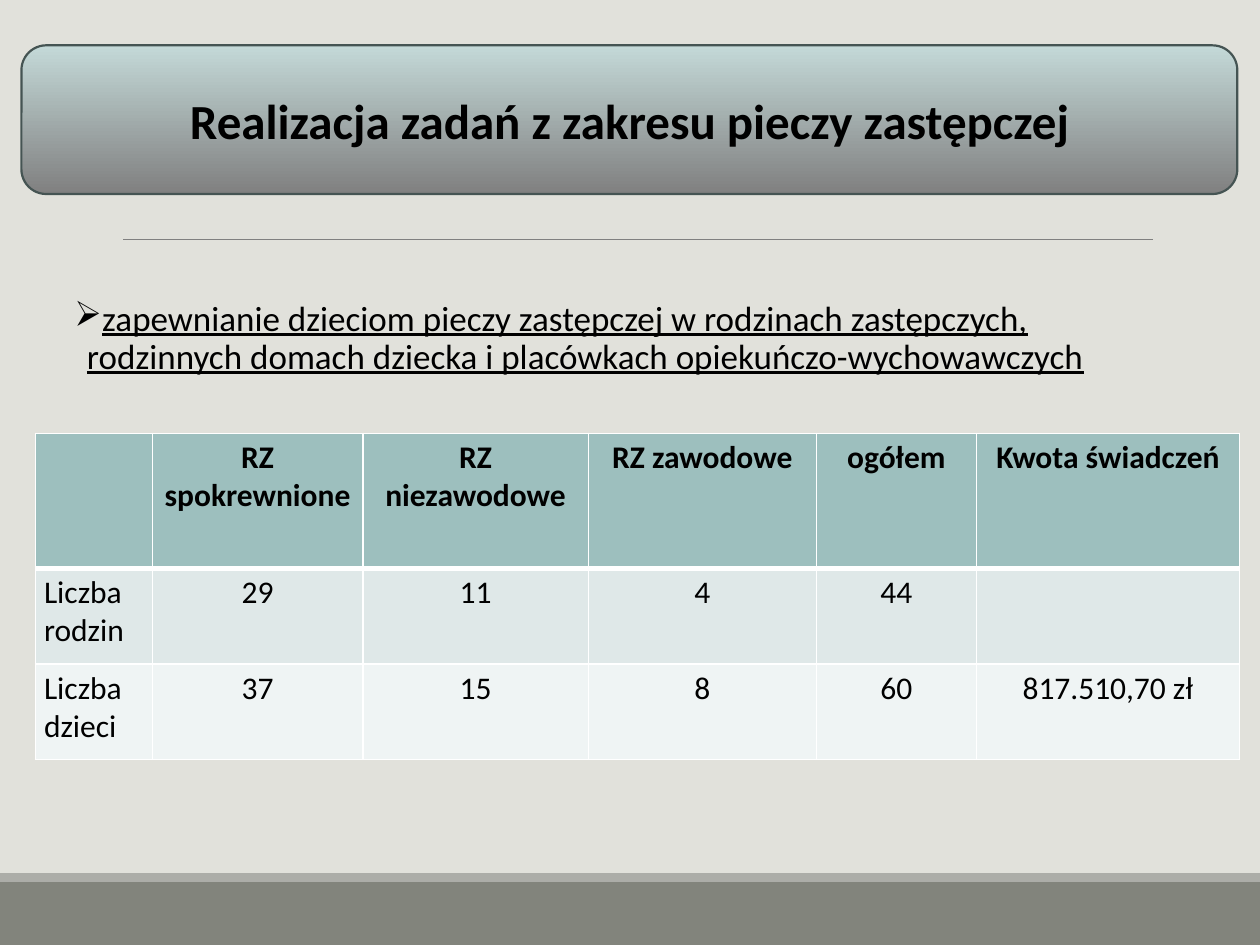
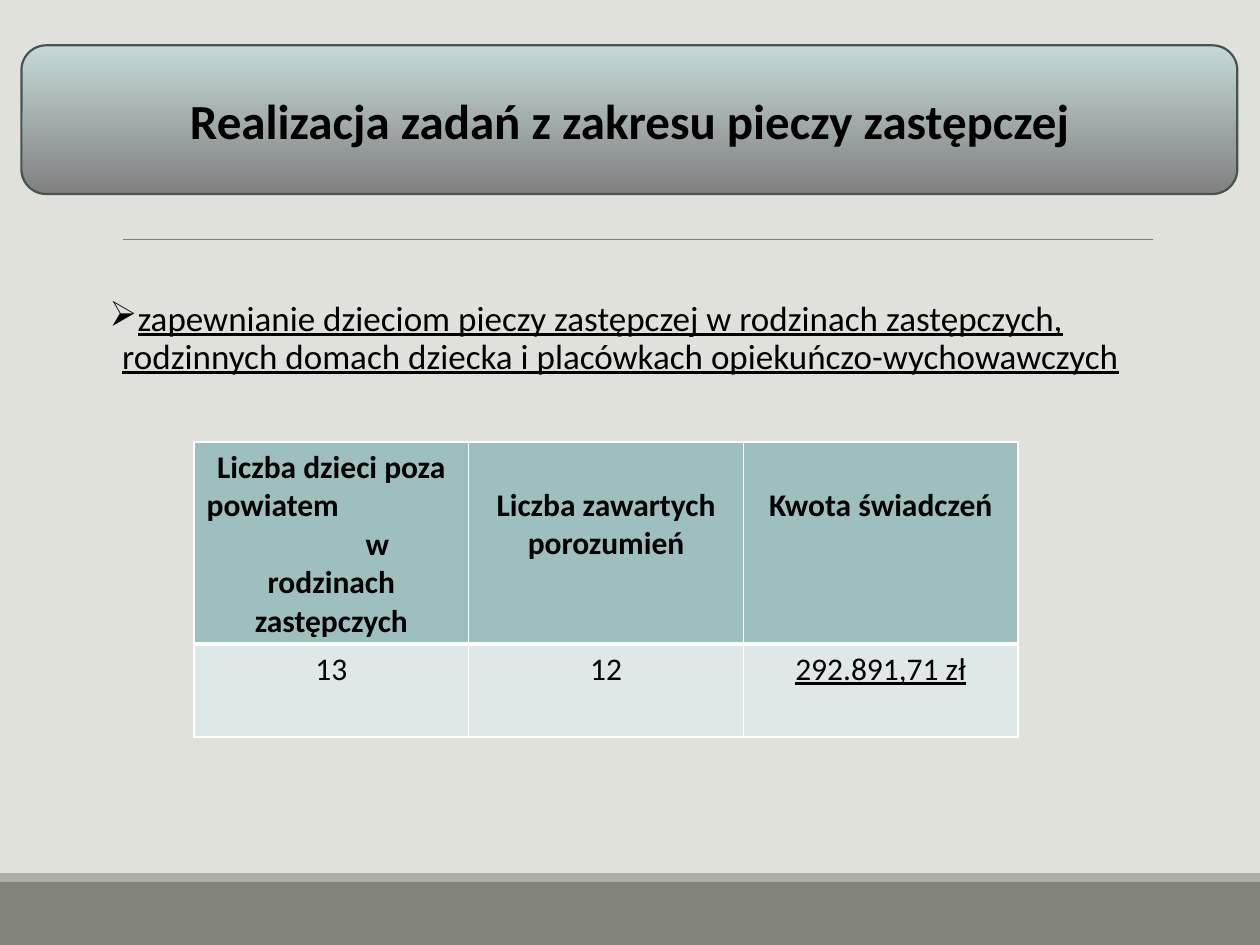
from pptx import Presentation
from pptx.dml.color import RGBColor
from pptx.enum.shapes import MSO_CONNECTOR as Connector, MSO_SHAPE as Shape
from pptx.enum.text import MSO_ANCHOR as Anchor, PP_ALIGN as Align
from pptx.oxml.ns import qn
from pptx.util import Inches, Pt
from lxml import etree

FONT = "Calibri"
BLACK, WHITE, BACKGROUND = "000000", "FFFFFF", "E1E1DB"
FOOTER, FOOTER_EDGE, RULE = "82847C", "ACADA8", "808080"
TITLE_LIGHT, TITLE_DARK, TITLE_LINE = "C4D9D8", "808080", "455453"
HEADER_FILL, BODY_FILLS = "9DBFBE", ["DFE8E8", "EFF4F4"]

TITLE = "Realizacja zadań z zakresu pieczy zastępczej"
TASK = ("zapewnianie dzieciom pieczy zastępczej w rodzinach zastępczych, "
        "rodzinnych domach dziecka i placówkach opiekuńczo-wychowawczych")
FAMILY_ROWS = [
    ["", "RZ spokrewnione", "RZ niezawodowe", "RZ zawodowe", "ogółem", "Kwota świadczeń"],
    ["Liczba rodzin", "29", "11", "4", "44", ""],
    ["Liczba dzieci", "37", "15", "8", "60", "817.510,70 zł"],
]
AGREEMENT_ROWS = [
    ["Liczba dzieci poza\npowiatem\nw\nrodzinach zastępczych",
     "Liczba zawartych porozumień", "Kwota świadczeń"],
    ["13", "12", "292.891,71 zł"],
]


def color(value):
    return RGBColor.from_string(value)


def inches(box):
    return [Inches(value) for value in box]


def style_font(paragraph, **formats):
    font = paragraph.font
    for name, value in {"name": FONT, **formats}.items():
        setattr(font, name, value)
    font.color.rgb = color(BLACK)


def add_band(slide, box, fill):
    band = slide.shapes.add_shape(Shape.RECTANGLE, *inches(box))
    band.shadow.inherit = False
    band.fill.solid()
    band.fill.fore_color.rgb = color(fill)
    band.line.fill.background()


def add_frame(slide):
    """Draw the footer bands and the rule under the title."""
    add_band(slide, (0, 7, 10, 0.5), FOOTER)
    add_band(slide, (0, 6.93, 10, 0.07), FOOTER_EDGE)
    rule = slide.shapes.add_connector(Connector.STRAIGHT, *inches((0.98, 1.9, 9.15, 1.9)))
    rule.line.color.rgb = color(RULE)
    rule.line.width = Pt(0.5)
    etree.SubElement(rule._element.spPr, qn("a:effectLst"))


def add_title(slide, box):
    title = slide.shapes.add_shape(Shape.ROUNDED_RECTANGLE, *inches(box))
    title.shadow.inherit = False
    title.fill.gradient()
    title.fill.gradient_angle = 90
    for stop, shade in zip(title.fill.gradient_stops, [TITLE_DARK, TITLE_LIGHT]):
        stop.color.rgb = color(shade)
    title.line.color.rgb = color(TITLE_LINE)
    title.line.width = Pt(1.25)
    frame = title.text_frame
    frame.word_wrap = True
    frame.vertical_anchor = Anchor.MIDDLE
    paragraph = frame.paragraphs[0]
    paragraph.text = TITLE
    paragraph.alignment = Align.CENTER
    style_font(paragraph, size=Pt(28), bold=True)


def add_task(slide, box):
    """Place the underlined task with its arrow bullet."""
    frame = slide.shapes.add_textbox(*inches(box)).text_frame
    frame.word_wrap = True
    frame.margin_left = frame.margin_right = 0
    paragraph = frame.paragraphs[0]
    paragraph.text = TASK
    paragraph.line_spacing = 0.9
    paragraph.space_after = Pt(2)
    properties = paragraph._p.get_or_add_pPr()
    properties.set("marL", str(Inches(0.1)))
    properties.set("indent", str(-Inches(0.1)))
    bullet_color = etree.SubElement(properties, qn("a:buClr"))
    etree.SubElement(bullet_color, qn("a:srgbClr"), val=BLACK)
    etree.SubElement(properties, qn("a:buChar"), char="➢")
    style_font(paragraph, size=Pt(20), underline=True)


def set_borders(cell, top, bottom):
    """Draw white cell borders; the widths above and below are in points."""
    properties = cell._tc.get_or_add_tcPr()
    widths = {"lnL": 1, "lnR": 1, "lnT": top, "lnB": bottom}
    for index, (side, width) in enumerate(widths.items()):
        line = etree.Element(qn(f"a:{side}"), w=str(Pt(width)))
        fill = etree.SubElement(line, qn("a:solidFill"))
        etree.SubElement(fill, qn("a:srgbClr"), val=WHITE)
        properties.insert(index, line)


def add_table(slide, box, rows, widths, heights, margins):
    table = slide.shapes.add_table(len(rows), len(widths), *inches(box)).table
    table.horz_banding = False
    for column, width in zip(table.columns, widths):
        column.width = Inches(width)
    for row, height in zip(table.rows, heights):
        row.height = Inches(height)
    side, edge = inches(margins)
    for row_index, texts in enumerate(rows):
        header = row_index == 0
        for column_index, text in enumerate(texts):
            cell = table.cell(row_index, column_index)
            cell.margin_left = cell.margin_right = side
            cell.margin_top = cell.margin_bottom = edge
            cell.fill.solid()
            cell.fill.fore_color.rgb = color(HEADER_FILL if header else BODY_FILLS[row_index - 1])
            set_borders(cell, top=3 if row_index == 1 else 1, bottom=3 if header else 1)
            cell.text = text
            for paragraph in cell.text_frame.paragraphs:
                paragraph.alignment = Align.CENTER
                style_font(paragraph, size=Pt(18), bold=header)
    return table


def build_families(slide):
    add_frame(slide)
    add_task(slide, (0.59, 2.34, 8.82, 0.8))
    table = add_table(slide, (0.28, 3.44, 9.55, 2.6), FAMILY_ROWS,
                      [0.93, 1.67, 1.79, 1.81, 1.27, 2.09], [1.07, 0.76, 0.76], (0.07, 0.04))
    for row_index in (1, 2):
        table.cell(row_index, 0).text_frame.paragraphs[0].alignment = Align.LEFT
    add_title(slide, (0.17, 0.36, 9.65, 1.18))


def build_agreements(slide):
    add_frame(slide)
    add_task(slide, (0.87, 2.34, 8.25, 0.8))
    table = add_table(slide, (1.54, 3.51, 6.54, 2.05), AGREEMENT_ROWS,
                      [2.18] * 3, [1.31, 0.74], (0.1, 0.05))
    county, preposition = table.cell(0, 0).text_frame.paragraphs[1:3]
    county.alignment = Align.LEFT
    preposition._p.get_or_add_pPr().set("marL", str(Inches(0.73)))
    for column_index in (1, 2):
        table.cell(0, column_index).margin_top = Inches(0.35)
    table.cell(1, 2).text_frame.paragraphs[0].font.underline = True
    add_title(slide, (0.17, 0.36, 9.65, 1.18))


def main():
    presentation = Presentation()
    presentation.slide_width, presentation.slide_height = inches((10, 7.5))
    background = presentation.slide_master.background.fill
    background.solid()
    background.fore_color.rgb = color(BACKGROUND)
    for build in (build_families, build_agreements):
        build(presentation.slides.add_slide(presentation.slide_layouts[6]))
    presentation.save("out.pptx")


if __name__ == "__main__":
    main()
